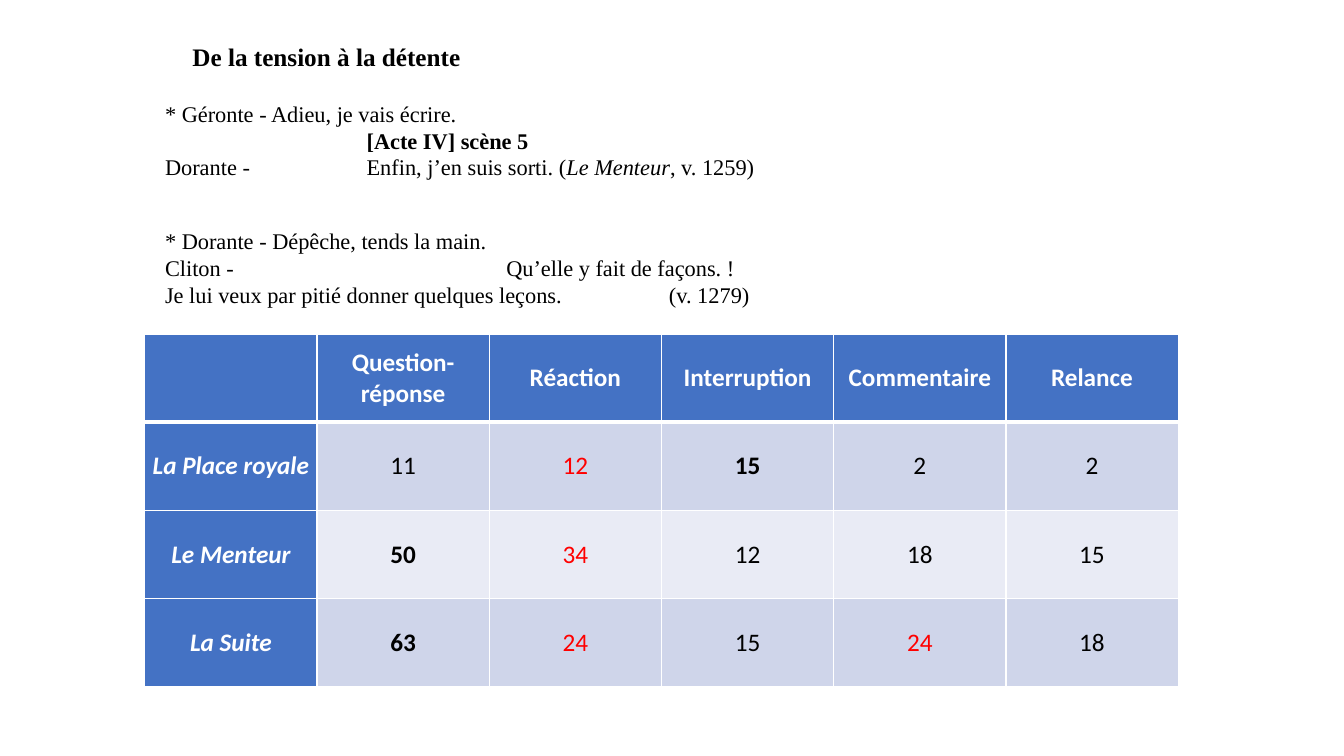
"""Build the slide on tension and release, with two verse quotations and a table of counts."""
from dataclasses import dataclass

from lxml import etree
from pptx import Presentation
from pptx import util as u
from pptx.dml.color import RGBColor
from pptx.enum import text as t
from pptx.oxml import ns

COLORS = {
    "ink": "000000",
    "red": "FF0000",
    "white": "FFFFFF",
    "header": "4472C4",
    "band_dark": "CFD5EA",
    "band_light": "E9EBF5",
}
SERIF, SANS = "Times New Roman", "Calibri"


@dataclass(frozen=True)
class Span:
    text: str
    bold: bool = False
    italic: bool = False
    color: str = "ink"


@dataclass(frozen=True)
class Line:
    spans: tuple[Span, ...]
    tab_stops: tuple[float, ...] = ()


@dataclass(frozen=True)
class Passage:
    left: float
    top: float
    width: float
    height: float
    size: int
    lines: tuple[Line, ...]
    wrap: bool = False


@dataclass(frozen=True)
class PlayRow:
    title: str
    counts: tuple[int, ...]
    bold: tuple[int, ...]
    red: tuple[int, ...]


PASSAGES = (
    Passage(3.91, 2.39, 15.54, 2.31, 16, (
        Line((Span("* Géronte - Adieu, je vais écrire."),)),
        Line((Span("\t"), Span("[Acte IV] scène 5", bold=True)), (5.08,)),
        Line((Span("Dorante - \tEnfin, j’en suis sorti. ("),
              Span("Le Menteur", italic=True),
              Span(", v. 1259)")), (5.08,)),
    )),
    Passage(4.6, 0.91, 7.34, 1.02, 18, (
        Line((Span("De la tension à la détente", bold=True),)),
    )),
    Passage(3.91, 5.61, 19.3, 2.31, 16, (
        Line((Span("* Dorante - Dépêche, tends la main."),)),
        Line((Span("Cliton - \tQu’elle y fait de façons. !"),), (8.6,)),
        Line((Span("Je lui veux par pitié donner quelques leçons. \t(v. 1279)"),), (12.7,)),
    ), wrap=True),
)

HEADINGS = ("", "Question-réponse", "Réaction", "Interruption", "Commentaire", "Relance")
PLAYS = (
    PlayRow("La Place royale", (11, 12, 15, 2, 2), bold=(2,), red=(1,)),
    PlayRow("Le Menteur", (50, 34, 12, 18, 15), bold=(0,), red=(1,)),
    PlayRow("La Suite", (63, 24, 15, 24, 18), bold=(0,), red=(1, 3)),
)
TABLE_LEFT, TABLE_TOP = 3.65, 8.42
COLUMN_WIDTH, ROW_HEIGHT = 4.34, 2.22


def write_span(paragraph, span: Span, font_name: str, size: int) -> None:
    run = paragraph.add_run()
    run.text = span.text
    run.font.name = font_name
    run.font.size = u.Pt(size)
    run.font.bold = span.bold
    run.font.italic = span.italic
    run.font.color.rgb = RGBColor.from_string(COLORS[span.color])


def set_tab_stops(paragraph, stops: tuple[float, ...]) -> None:
    tabs = etree.SubElement(paragraph._p.get_or_add_pPr(), ns.qn("a:tabLst"))
    for stop in stops:
        etree.SubElement(tabs, ns.qn("a:tab"), pos=str(u.Cm(stop)), algn="l")


def draw_passage(slide, passage: Passage) -> None:
    frame = slide.shapes.add_textbox(
        u.Cm(passage.left), u.Cm(passage.top), u.Cm(passage.width), u.Cm(passage.height)
    ).text_frame
    frame.word_wrap = passage.wrap
    frame.auto_size = t.MSO_AUTO_SIZE.SHAPE_TO_FIT_TEXT
    for index, line in enumerate(passage.lines):
        paragraph = frame.add_paragraph() if index else frame.paragraphs[0]
        if line.tab_stops:
            set_tab_stops(paragraph, line.tab_stops)
        for span in line.spans:
            write_span(paragraph, span, SERIF, passage.size)


def set_borders(cell, widths: dict[str, int]) -> None:
    properties = cell._tc.get_or_add_tcPr()
    for side, width in widths.items():
        border = etree.SubElement(properties, ns.qn(f"a:ln{side}"), w=str(u.Pt(width)))
        fill = etree.SubElement(border, ns.qn("a:solidFill"))
        etree.SubElement(fill, ns.qn("a:srgbClr"), val=COLORS["white"])


def draw_cell(cell, span: Span, fill: str, top: int, bottom: int) -> None:
    set_borders(cell, {"L": 1, "R": 1, "T": top, "B": bottom})
    cell.fill.solid()
    cell.fill.fore_color.rgb = RGBColor.from_string(COLORS[fill])
    cell.vertical_anchor = t.MSO_ANCHOR.MIDDLE
    cell.margin_left = cell.margin_right = u.Cm(0.19)
    cell.margin_top = cell.margin_bottom = 0
    if span.text:
        paragraph = cell.text_frame.paragraphs[0]
        paragraph.alignment = t.PP_ALIGN.CENTER
        write_span(paragraph, span, SANS, 18)


def play_spans(play: PlayRow) -> list[Span]:
    title = Span(play.title, bold=True, italic=True, color="white")
    return [title] + [
        Span(str(count), bold=index in play.bold, color="red" if index in play.red else "ink")
        for index, count in enumerate(play.counts)
    ]


def draw_counts(slide) -> None:
    rows = [[Span(heading, bold=True, color="white") for heading in HEADINGS]]
    rows += [play_spans(play) for play in PLAYS]
    counts = slide.shapes.add_table(
        len(rows), len(HEADINGS), u.Cm(TABLE_LEFT), u.Cm(TABLE_TOP),
        u.Cm(COLUMN_WIDTH * len(HEADINGS)), u.Cm(ROW_HEIGHT * len(rows)),
    ).table
    counts.first_col = True
    for column in counts.columns:
        column.width = u.Cm(COLUMN_WIDTH)
    for row_index, spans in enumerate(rows):
        counts.rows[row_index].height = u.Cm(ROW_HEIGHT)
        band = "band_dark" if row_index % 2 else "band_light"
        for column_index, span in enumerate(spans):
            fill = "header" if row_index == 0 or column_index == 0 else band
            draw_cell(counts.cell(row_index, column_index), span, fill,
                      top=3 if row_index == 1 else 1, bottom=3 if row_index == 0 else 1)


def main() -> None:
    deck = Presentation()
    deck.slide_width, deck.slide_height = u.Cm(33.87), u.Cm(19.05)
    slide = deck.slides.add_slide(deck.slide_layouts[6])
    for passage in PASSAGES:
        draw_passage(slide, passage)
    draw_counts(slide)
    deck.save("out.pptx")


if __name__ == "__main__":
    main()
